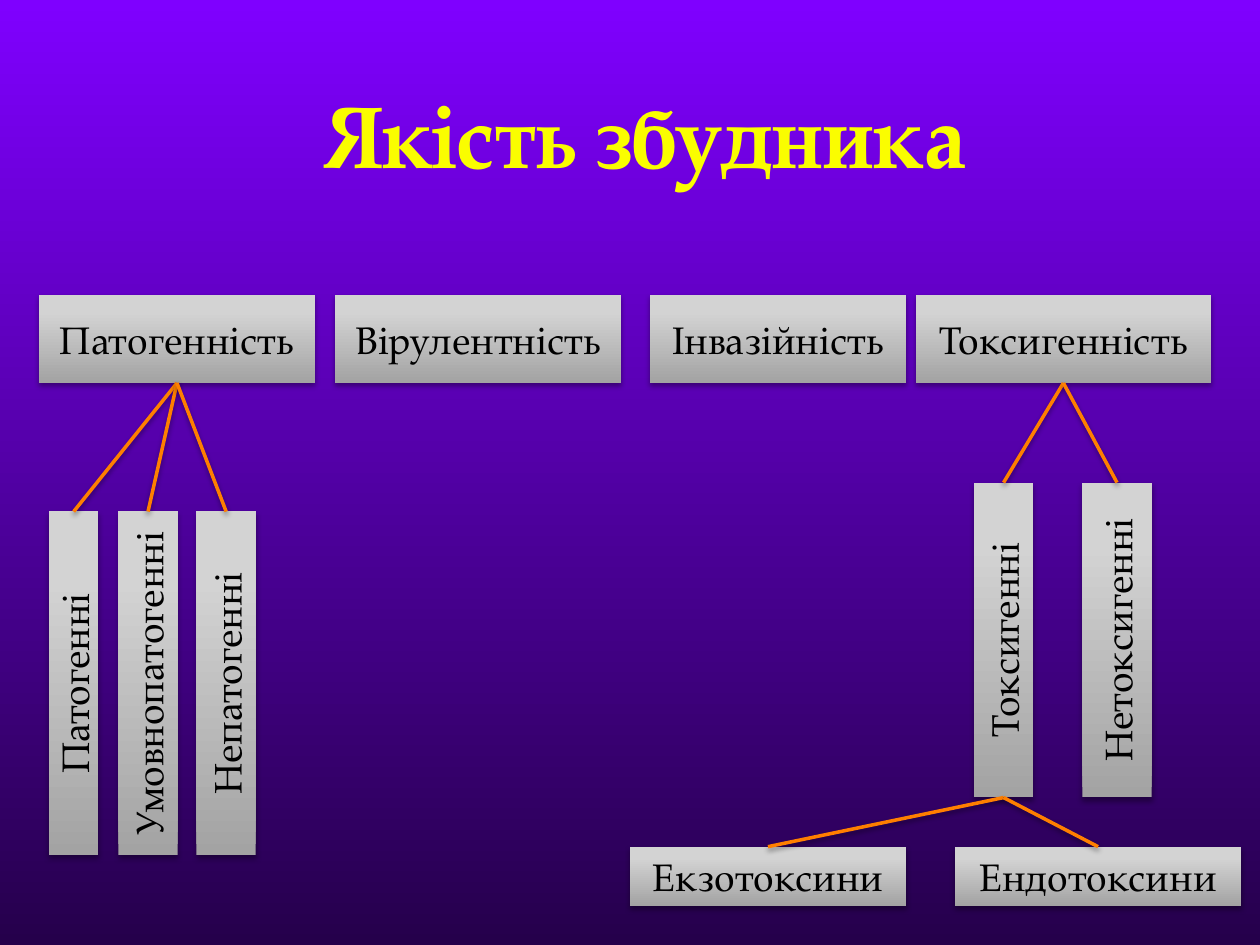
from lxml import etree
from pptx import Presentation
from pptx.dml import color
from pptx.enum import shapes, text
from pptx.oxml import ns
from pptx.util import Inches, Pt

FONT = "TeX Gyre Pagella"
BACKGROUND = [(0, "7F00FF"), (100, "25004B")]
SILVER = [(0, "A3A3A3"), (80, "D3D3D3"), (100, "D4D4D4")]


def rgb(value):
    return color.RGBColor.from_string(value)


def add_element(parent, tag, **values):
    element = etree.SubElement(parent, ns.qn(tag))
    for name, value in values.items():
        element.set(name, str(value))
    return element


def paint_gradient(fill, owner, stops, angle):
    """Fill with any number of stops; owner is the XML element that holds the fill."""
    fill.gradient()
    fill.gradient_angle = angle
    stop_list = next(owner.iter(ns.qn("a:gsLst")))
    for stop in list(stop_list):
        stop_list.remove(stop)
    for position, value in stops:
        stop = add_element(stop_list, "a:gs", pos=position * 1000)
        add_element(stop, "a:srgbClr", val=value)


def add_shadow(shape, opacity, distance):
    effects = add_element(shape._element.spPr, "a:effectLst")
    shadow = add_element(effects, "a:outerShdw", blurRad=Pt(3.1), dist=Pt(distance),
                         dir=90 * 60000, rotWithShape=0)
    black = add_element(shadow, "a:srgbClr", val="000000")
    add_element(black, "a:alpha", val=opacity * 1000)


def write(frame, words, value, **font):
    frame.word_wrap = True
    frame.vertical_anchor = text.MSO_ANCHOR.MIDDLE
    para = frame.paragraphs[0]
    para.alignment = text.PP_ALIGN.CENTER
    span = para.add_run()
    span.text = words
    for name, setting in {"name": FONT, **font}.items():
        setattr(span.font, name, setting)
    span.font.color.rgb = rgb(value)


def add_title(page, words, box):
    title = page.shapes.title
    for name, length in zip(("left", "top", "width", "height"), box):
        setattr(title, name, Inches(length))
    write(title.text_frame, words, "FAFD00", size=Pt(50), bold=True)


def add_box(page, words, box, upright=False):
    shape = page.shapes.add_shape(shapes.MSO_SHAPE.RECTANGLE, *map(Inches, box))
    paint_gradient(shape.fill, shape._element, SILVER, 90)
    shape.line.fill.background()
    add_shadow(shape, 35, 1.8)
    write(shape.text_frame, words, "000000", size=Pt(22))
    if upright:
        shape.text_frame._txBody.bodyPr.set("vert", "vert270")
    return shape


def add_row(page, top, height, columns, upright=False):
    """Add boxes of one height; columns holds (words, left, width)."""
    return [add_box(page, words, (left, top, width, height), upright)
            for words, left, width in columns]


def add_branches(page, parent, children):
    for child in children:
        branch = page.shapes.add_connector(shapes.MSO_CONNECTOR.STRAIGHT, 0, 0, 0, 0)
        branch.begin_connect(parent, 2)
        branch.end_connect(child, 0)
        branch.line.color.rgb = rgb("FF7F00")
        branch.line.width = Pt(2)
        add_shadow(branch, 38, 1.6)


def add_tree(page):
    qualities = add_row(page, 2.34, 0.7, [
        ("Патогенність", 0.31, 2.19), ("Вірулентність", 2.66, 2.27),
        ("Інвазійність", 5.16, 2.03), ("Токсигенність", 7.27, 2.34)])
    pathogenic = add_row(page, 4.06, 2.73, [
        ("Патогенні", 0.39, 0.39), ("Умовнопатогенні", 0.94, 0.47),
        ("Непатогенні", 1.56, 0.47)], upright=True)
    toxigenic = add_row(page, 3.83, 2.5, [
        ("Токсигенні", 7.73, 0.47), ("Нетоксигенні", 8.59, 0.55)], upright=True)
    toxins = add_row(page, 6.72, 0.47, [
        ("Екзотоксини", 5, 2.19), ("Ендотоксини", 7.58, 2.27)])
    add_branches(page, qualities[0], pathogenic)
    add_branches(page, qualities[-1], toxigenic)
    add_branches(page, toxigenic[0], toxins)


def main():
    deck = Presentation()
    deck.slide_width, deck.slide_height = Inches(10), Inches(7.5)
    page = deck.slides.add_slide(deck.slide_layouts[5])
    paint_gradient(page.background.fill, page._element, BACKGROUND, 270)
    add_title(page, "Якість збудника", (0.47, 0.56, 9.3, 1))
    add_tree(page)
    deck.save("out.pptx")


if __name__ == "__main__":
    main()
